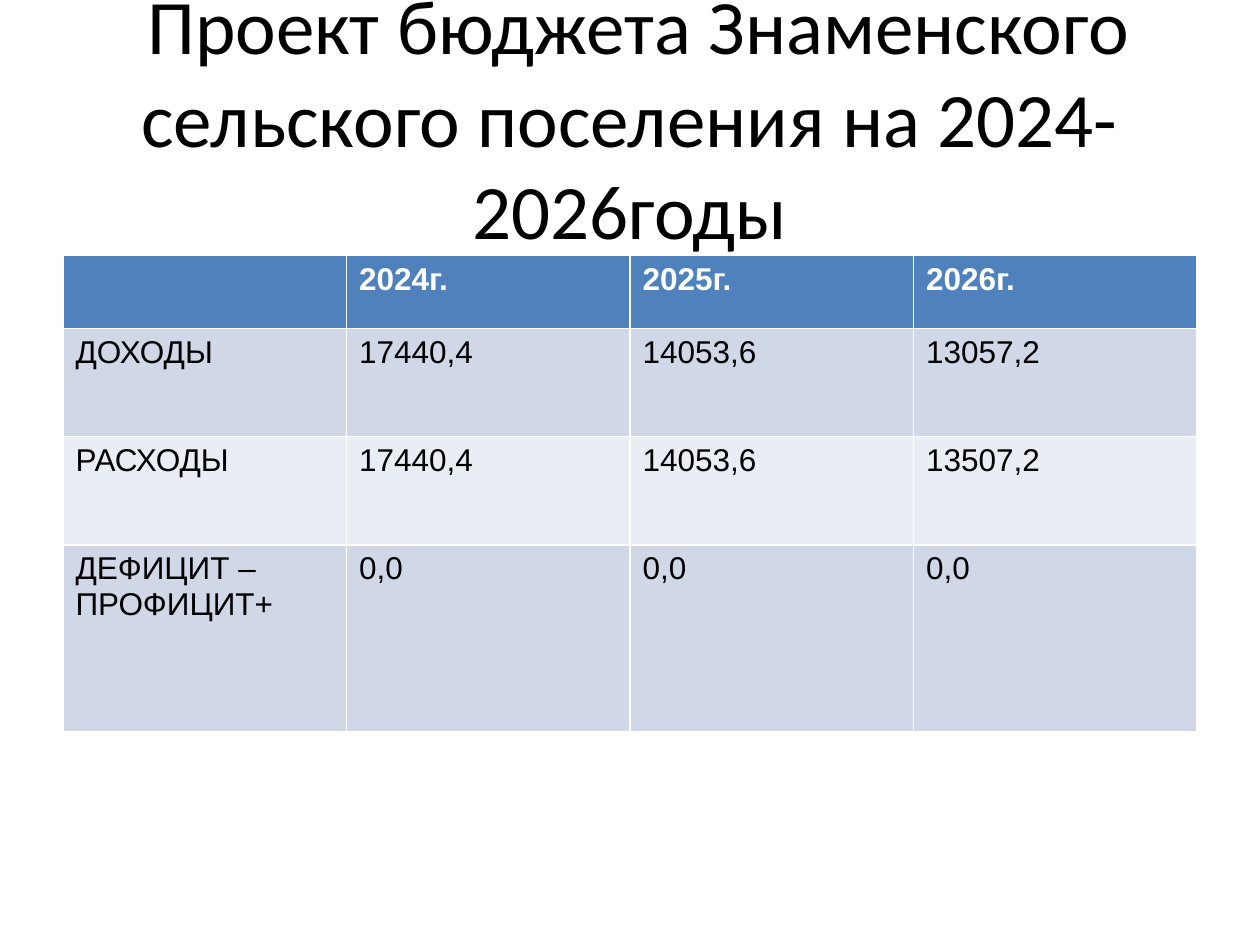
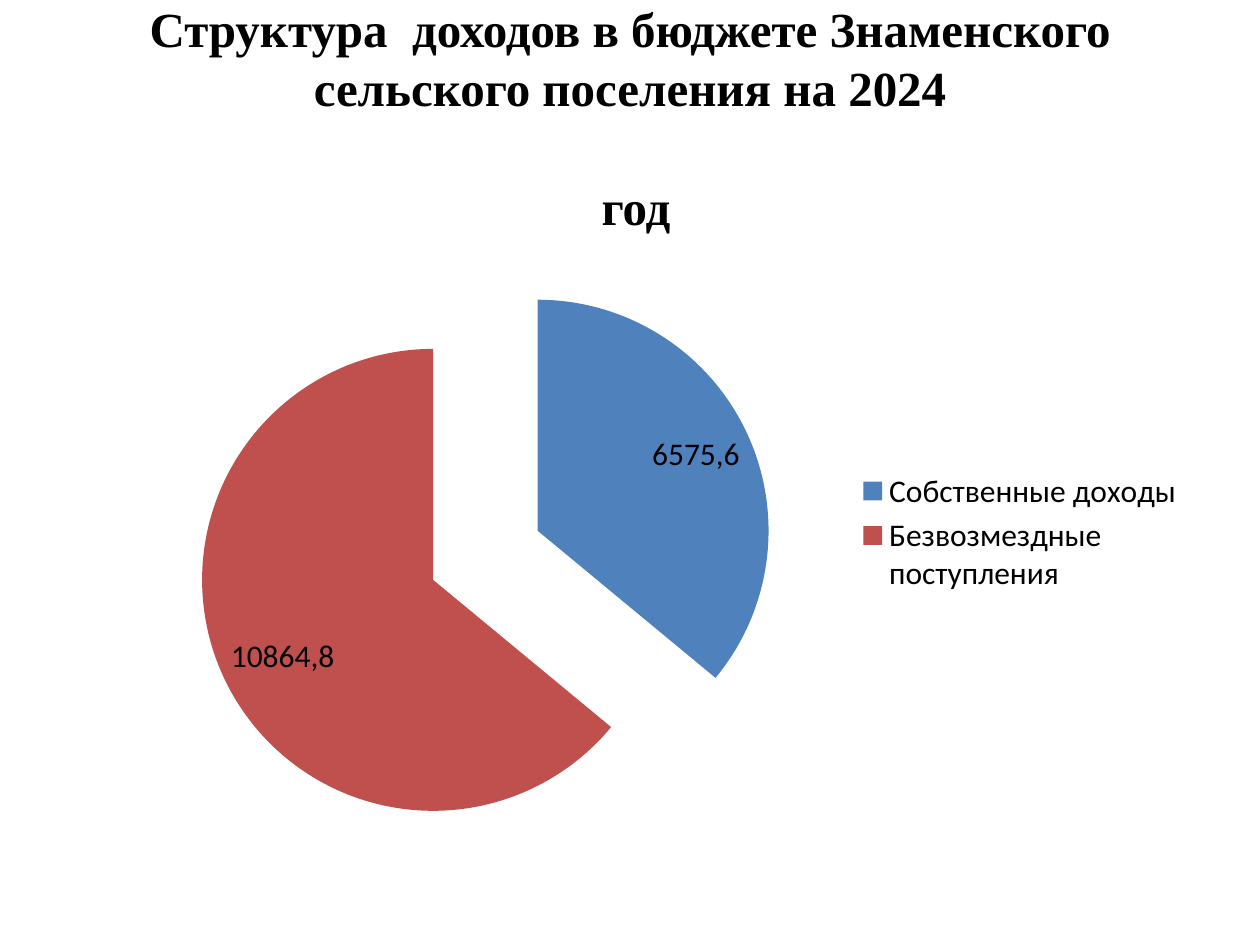
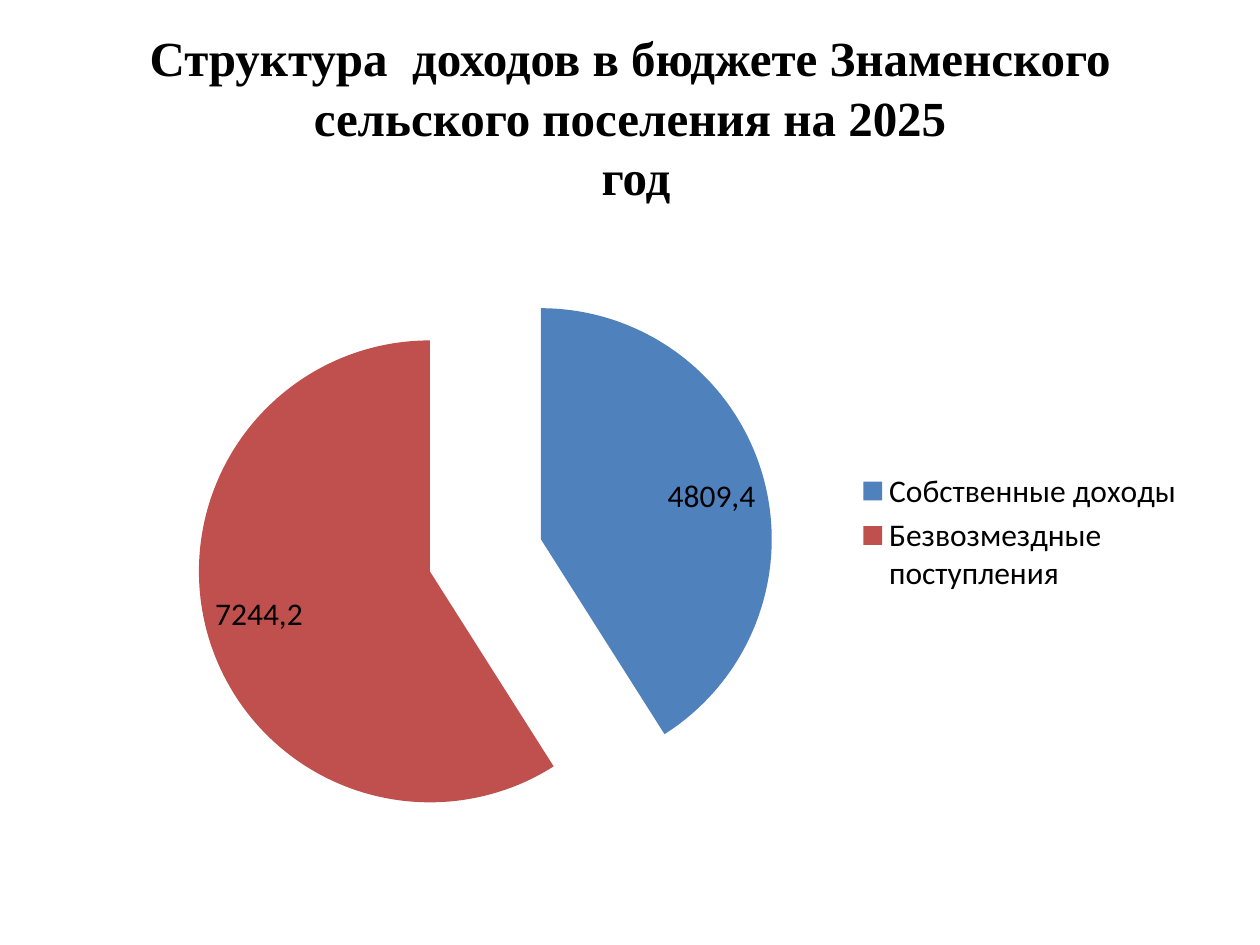
"""Builds the budget deck of a rural settlement: one table and two income pies."""
from dataclasses import dataclass

from lxml import etree
from pptx import Presentation
from pptx.chart.data import CategoryChartData
from pptx.dml.color import RGBColor
from pptx.enum.chart import XL_CHART_TYPE, XL_LABEL_POSITION, XL_LEGEND_POSITION
from pptx.enum.text import MSO_ANCHOR, MSO_AUTO_SIZE, PP_ALIGN
from pptx.oxml.ns import qn
from pptx.util import Inches, Pt

PIE = XL_CHART_TYPE.PIE
INSIDE_END = XL_LABEL_POSITION.INSIDE_END
LEGEND_RIGHT = XL_LEGEND_POSITION.RIGHT
MIDDLE = MSO_ANCHOR.MIDDLE
NO_AUTOFIT = MSO_AUTO_SIZE.NONE
CENTER = PP_ALIGN.CENTER
TITLE_ONLY = 5


@dataclass(frozen=True)
class Theme:
    """Colours, fonts and type sizes of the deck."""
    ink: RGBColor = RGBColor.from_string("000000")
    paper: RGBColor = RGBColor.from_string("FFFFFF")
    blue: RGBColor = RGBColor.from_string("4F81BD")
    red: RGBColor = RGBColor.from_string("C0504D")
    odd_band: RGBColor = RGBColor.from_string("D0D8E8")
    even_band: RGBColor = RGBColor.from_string("E9EDF4")
    main_font: str = "Calibri"
    table_font: str = "Arial"
    heading_font: str = "Times New Roman"
    main_title: Pt = Pt(44)
    pie_title: Pt = Pt(28)
    pie_leading: Pt = Pt(34)
    text: Pt = Pt(18)


THEME = Theme()

BUDGET_TITLE = " Проект бюджета Знаменского сельского поселения на 2024-2026годы"
BUDGET = [
    ("", "2024г.", "2025г.", "2026г."),
    ("ДОХОДЫ", "17440,4", "14053,6", "13057,2"),
    ("РАСХОДЫ", "17440,4", "14053,6", "13507,2"),
    ("ДЕФИЦИТ –ПРОФИЦИТ+", "0,0", "0,0", "0,0"),
]
INCOME_TITLE = "Структура  доходов в бюджете Знаменского сельского поселения на {year}"
INCOME_TITLE_END = " год"
INCOME_SOURCES = ("Собственные доходы", "Безвозмездные поступления")
INCOMES = [
    {"year": 2024, "shares": (36, 64), "amounts": ("6575,6", "10864,8"), "gap_lines": 1},
    {"year": 2025, "shares": (41, 59), "amounts": ("4809,4", "7244,2"), "gap_lines": 0},
]

SLIDE_WIDTH, SLIDE_HEIGHT = Inches(10), Inches(7.5)
MARGIN = 0.05
TITLE_BOX = (MARGIN, 0.04, 1 - 2 * MARGIN, 1 / 6)
TABLE_BOX = (MARGIN, 0.27, 1 - 2 * MARGIN, 0.5)
PIE_BOX = (MARGIN, 0.7 / 3, 1 - 2 * MARGIN, 0.66)
ROW_HEIGHTS = (0.58, 0.86, 0.86, 1.48)
PIE_PLOT = {"x": 0.115, "y": 0.074, "w": 0.515, "h": 0.926}
EXPLOSION = 25


def place(box):
    """Turn shares of the slide into left, top, width and height."""
    sides = (SLIDE_WIDTH, SLIDE_HEIGHT) * 2
    return [round(share * side) for share, side in zip(box, sides)]


def style(font, name, size, color, bold=False):
    """Apply one type style to a font."""
    font.name, font.size, font.bold = name, size, bold
    font.color.rgb = color


def add_titled_slide(deck, lines, font_name, size, bold=False):
    """Add a slide whose title has one paragraph per line."""
    slide = deck.slides.add_slide(deck.slide_layouts[TITLE_ONLY])
    title = slide.shapes.title
    title.left, title.top, title.width, title.height = place(TITLE_BOX)
    frame = title.text_frame
    frame.text = "\n".join(lines)
    frame.auto_size, frame.vertical_anchor = NO_AUTOFIT, MIDDLE
    for paragraph in frame.paragraphs:
        paragraph.alignment = CENTER
        for run in paragraph.runs:
            style(run.font, font_name, size, THEME.ink, bold)
    return slide


def add_budget_slide(deck):
    """Add the table of income, spending and balance by year."""
    slide = add_titled_slide(deck, [BUDGET_TITLE], THEME.main_font, THEME.main_title)
    table = slide.shapes.add_table(len(BUDGET), len(BUDGET[0]), *place(TABLE_BOX)).table
    for row, (entries, height) in enumerate(zip(BUDGET, ROW_HEIGHTS)):
        table.rows[row].height = Inches(height)
        header = row == 0
        band = THEME.blue if header else THEME.odd_band if row % 2 else THEME.even_band
        for column, entry in enumerate(entries):
            cell = table.cell(row, column)
            cell.fill.solid()
            cell.fill.fore_color.rgb = band
            cell.text = entry
            for run in cell.text_frame.paragraphs[0].runs:
                style(run.font, THEME.table_font, THEME.text,
                      THEME.paper if header else THEME.ink, header)


def set_plot_layout(chart):
    """Fix the inner plot area as shares of the chart."""
    plot_area = chart.plots[0]._element.getparent()
    layout = plot_area.find(qn("c:layout"))
    if layout is None:
        layout = etree.Element(qn("c:layout"))
        plot_area.insert(0, layout)
    manual = etree.SubElement(layout, qn("c:manualLayout"))
    settings = {"layoutTarget": "inner", "xMode": "edge", "yMode": "edge", **PIE_PLOT}
    for tag, setting in settings.items():
        etree.SubElement(manual, qn(f"c:{tag}")).set("val", str(setting))


def add_income_slide(deck, income):
    """Add the pie of income sources for one year."""
    lines = [INCOME_TITLE.format(year=income["year"]), INCOME_TITLE_END]
    slide = add_titled_slide(deck, lines, THEME.heading_font, THEME.pie_title, True)
    paragraphs = slide.shapes.title.text_frame.paragraphs
    for paragraph in paragraphs:
        paragraph.line_spacing = THEME.pie_leading
        paragraph.space_before = Pt(0)
    paragraphs[-1].space_before = Pt(income["gap_lines"] * THEME.pie_leading.pt)

    shares = CategoryChartData()
    shares.categories = INCOME_SOURCES
    shares.add_series("Series 1", income["shares"])
    chart = slide.shapes.add_chart(PIE, *place(PIE_BOX), shares).chart
    style(chart.font, THEME.main_font, THEME.text, THEME.ink)
    chart.has_title = False
    chart.has_legend = True
    chart.legend.position = LEGEND_RIGHT
    chart.legend.include_in_layout = False
    set_plot_layout(chart)

    pie = chart.plots[0]
    pie.vary_by_categories = True
    series = pie.series[0]
    explosion = etree.Element(qn("c:explosion"))
    explosion.set("val", str(EXPLOSION))
    series._element.find(qn("c:tx")).addnext(explosion)
    for index, (amount, color) in enumerate(zip(income["amounts"], (THEME.blue, THEME.red))):
        point = series.points[index]
        point.format.fill.solid()
        point.format.fill.fore_color.rgb = color
        label = point.data_label
        label.text_frame.text = amount
        label.position = INSIDE_END
        style(label.text_frame.paragraphs[0].runs[0].font,
              THEME.main_font, THEME.text, THEME.ink)


def main():
    """Build and save the deck."""
    deck = Presentation()
    deck.slide_width, deck.slide_height = SLIDE_WIDTH, SLIDE_HEIGHT
    add_budget_slide(deck)
    for income in INCOMES:
        add_income_slide(deck, income)
    deck.save("out.pptx")


if __name__ == "__main__":
    main()
